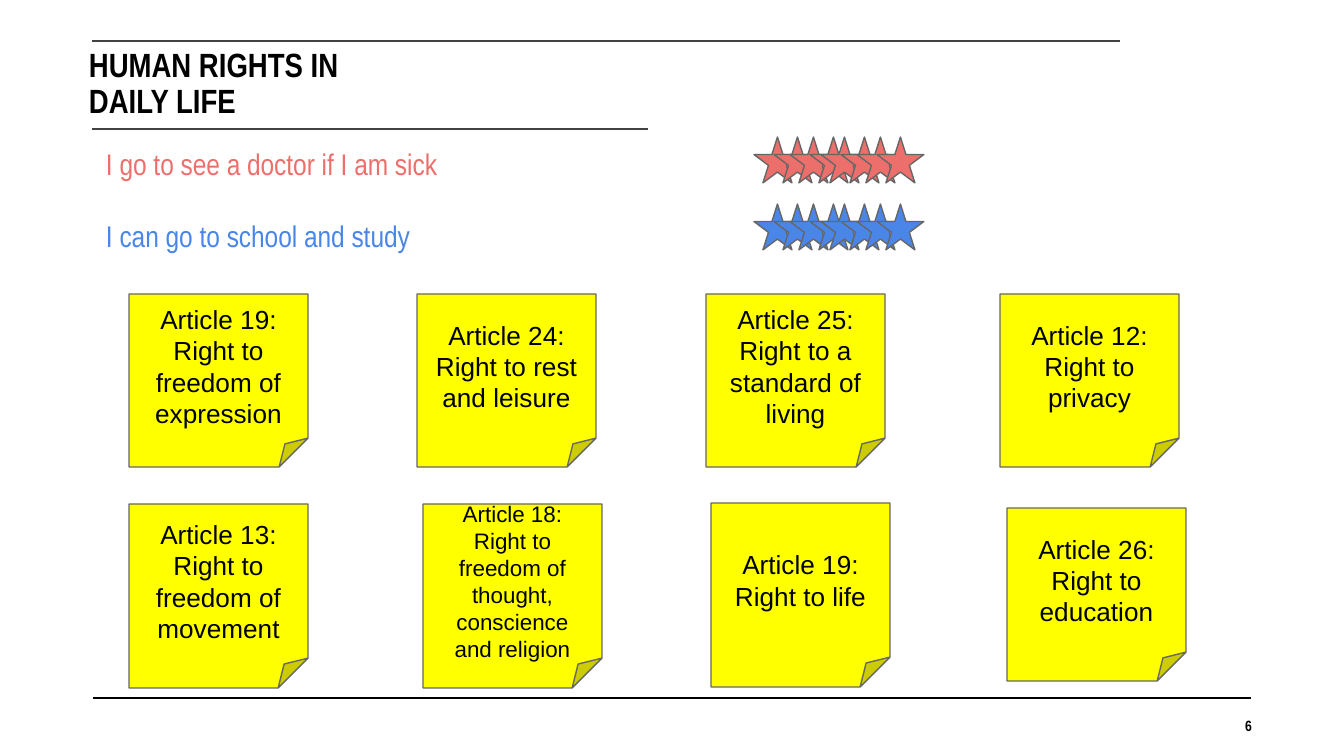
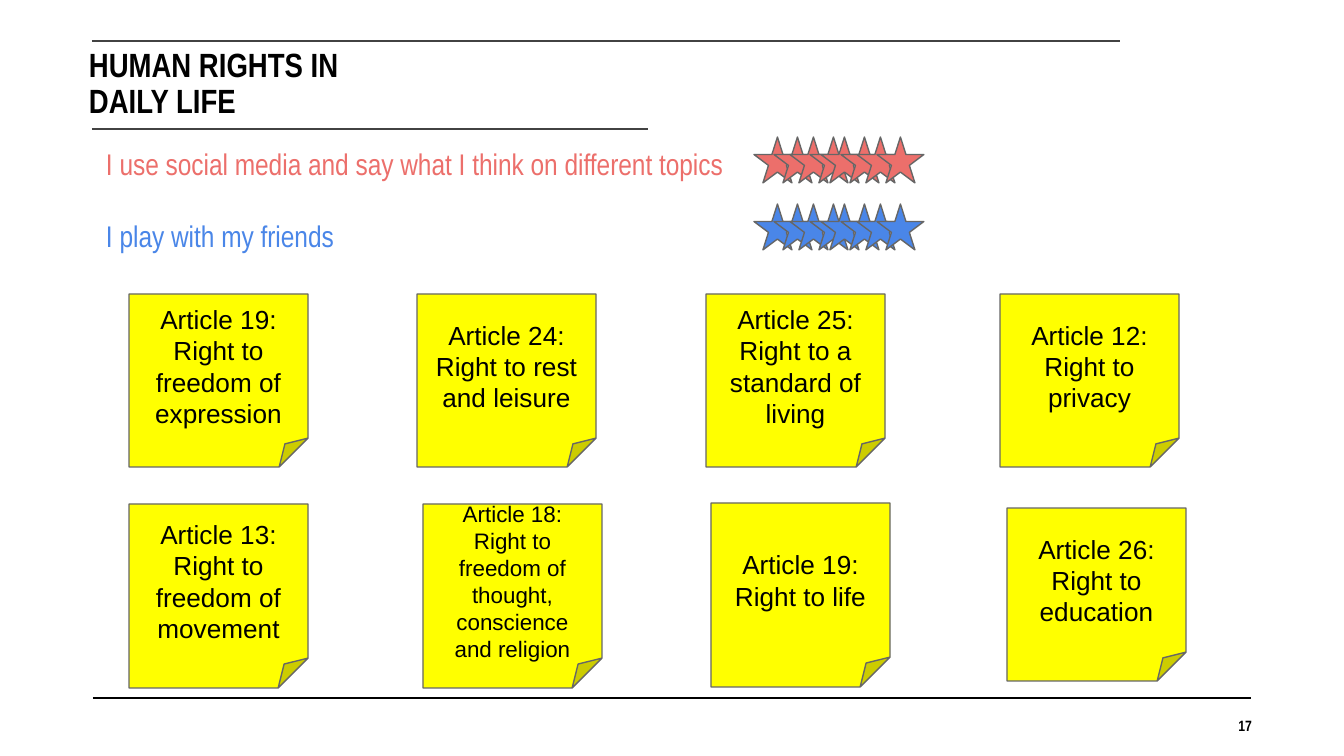
from lxml import etree
from pptx import Presentation, util as u
from pptx.dml.color import RGBColor
from pptx.enum import shapes, text
from pptx.oxml.ns import qn

BLACK = RGBColor(0x00, 0x00, 0x00)
GREY = RGBColor(0x42, 0x42, 0x42)
EDGE = RGBColor(0x66, 0x66, 0x66)
YELLOW = RGBColor(0xFF, 0xFF, 0x00)
RED = RGBColor(0xEC, 0x6F, 0x6B)
BLUE = RGBColor(0x4A, 0x86, 0xE8)

NARROW = "Arial Narrow"
SANS = "Arial"
PAD = 13
STAR_STEPS = (0, 20, 36, 56)
STAR_SHIFT = 67

NOTES = [
    (129, 294, 173, 14, "Article 19: Right to freedom of expression"),
    (417, 294, 173, 14, "Article 24: Right to rest and leisure"),
    (706, 294, 173, 14, "Article 25: Right to a standard of living"),
    (1000, 294, 173, 14, "Article 12: Right to privacy"),
    (129, 504, 184, 14, "Article 13: Right to freedom of movement"),
    (423, 504, 184, 12, "Article 18: Right to freedom of thought, conscience and religion"),
    (711, 503, 184, 14, "Article 19: Right to life"),
    (1007, 508, 173, 14, "Article 26: Right to education"),
]

PAGES = [
    ("6", "I go to see a doctor if I am sick", "I can go to school and study"),
    ("17", "I use social media and say what I think on different topics",
     "I play with my friends"),
]


def px(n):
    return u.Emu(round(n * 914400 / 134.4))


class Deck:
    def __init__(self):
        self.prs = Presentation()
        self.prs.slide_width = px(1344)
        self.prs.slide_height = px(756)
        self.slide = None

    def page(self, num):
        self.slide = self.prs.slides.add_slide(self.prs.slide_layouts[6])
        self.rule(93, 1251, 698, BLACK, 1.5)
        self.rule(92, 1120, 41, GREY, 1)
        self.rule(92, 648, 129, GREY, 1)
        self.title("HUMAN RIGHTS IN", "DAILY LIFE")
        self.number(num)

    def rule(self, left, right, y, color, width):
        line = self.slide.shapes.add_connector(
            shapes.MSO_CONNECTOR.STRAIGHT, px(left), px(y), px(right), px(y))
        line.line.color.rgb = color
        line.line.width = u.Pt(width)
        etree.SubElement(line._element.spPr, qn("a:effectLst"))

    def frame(self, shape, side, ends, anchor):
        tf = shape.text_frame
        tf.word_wrap = True
        tf.margin_left = tf.margin_right = px(side)
        tf.margin_top = tf.margin_bottom = px(ends)
        tf.vertical_anchor = anchor
        return tf

    def box(self, left, top, width, height, side, ends, anchor=text.MSO_ANCHOR.TOP):
        shape = self.slide.shapes.add_textbox(px(left), px(top), px(width), px(height))
        return self.frame(shape, side, ends, anchor)

    def run(self, para, words, size, color=BLACK, font=NARROW, bold=False):
        run = para.add_run()
        run.text = words
        run.font.name = font
        run.font.size = u.Pt(size)
        run.font.bold = bold
        run.font.color.rgb = color

    def title(self, first, second):
        para = self.box(79, 48, 456, 70, 10, 0).paragraphs[0]
        para.line_spacing = 0.9
        self.run(para, first, 18, bold=True)
        para.add_line_break()
        self.run(para, second, 18, bold=True)

    def number(self, num):
        para = self.box(1185, 720, 67, 15, 0, 0, text.MSO_ANCHOR.BOTTOM).paragraphs[0]
        para.alignment = text.PP_ALIGN.RIGHT
        self.run(para, num, 8, bold=True)

    def claims(self, first, second):
        tf = self.box(93, 133, 676, 239, PAD, PAD)
        self.run(tf.paragraphs[0], first, 16, RED)
        para = tf.add_paragraph()
        para.space_before = u.Pt(19)
        self.run(para, second, 16, BLUE)

    def shape(self, kind, left, top, width, height, color):
        shape = self.slide.shapes.add_shape(kind, px(left), px(top), px(width), px(height))
        shape.shadow.inherit = False
        shape.fill.solid()
        shape.fill.fore_color.rgb = color
        shape.line.color.rgb = EDGE
        shape.line.width = u.Pt(0.75)
        return shape

    def note(self, left, top, height, size, words):
        shape = self.shape(shapes.MSO_SHAPE.FOLDED_CORNER, left, top, 179, height, YELLOW)
        para = self.frame(shape, PAD, PAD, text.MSO_ANCHOR.MIDDLE).paragraphs[0]
        para.alignment = text.PP_ALIGN.CENTER
        self.run(para, words, size, font=SANS)

    def stars(self, top, color):
        for shift in (0, STAR_SHIFT):
            for step in STAR_STEPS:
                self.shape(shapes.MSO_SHAPE.STAR_5_POINT,
                           754 + shift + step, top, 47, 46, color)


def main():
    deck = Deck()
    for num, first, second in PAGES:
        deck.page(num)
        for note in NOTES:
            deck.note(*note)
        deck.claims(first, second)
        deck.stars(137, RED)
        deck.stars(204, BLUE)
    deck.prs.save("out.pptx")


if __name__ == "__main__":
    main()
